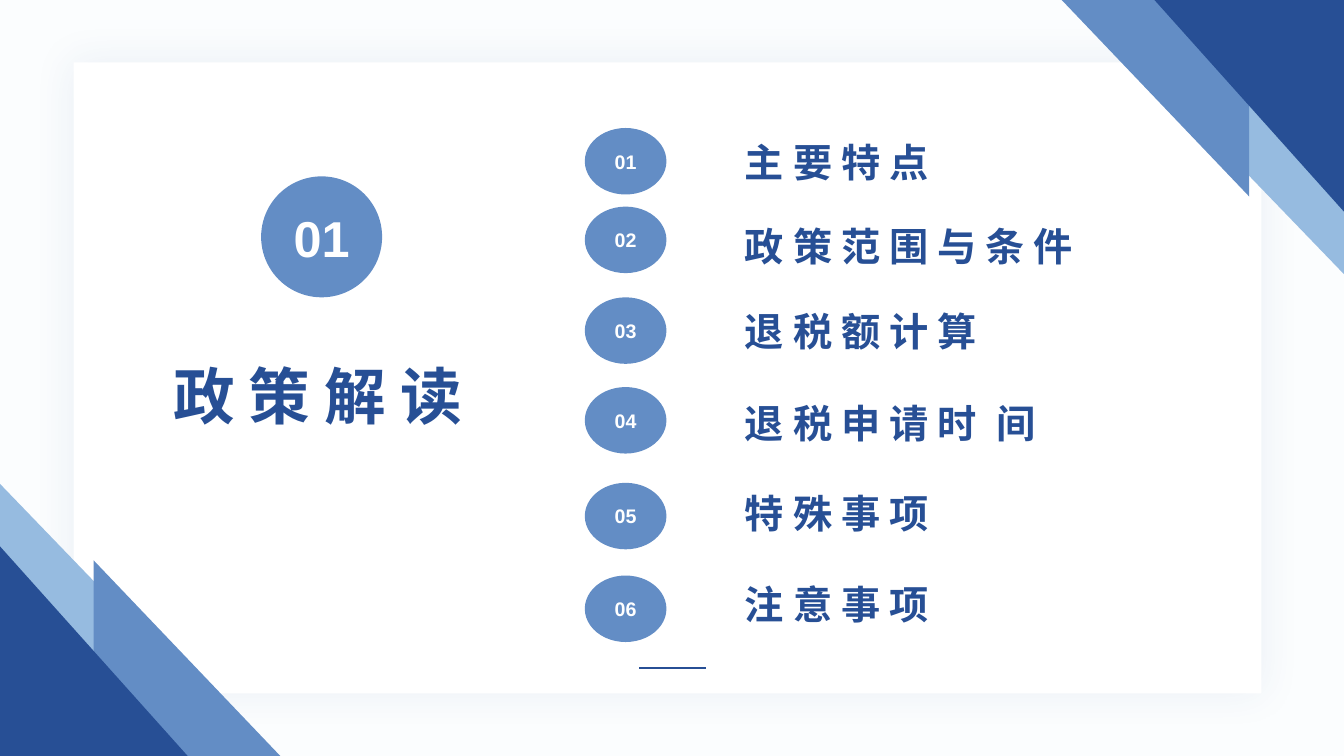
from lxml import etree
from pptx import Presentation
from pptx.dml.color import RGBColor
from pptx.enum.shapes import MSO_CONNECTOR as CONNECTOR, MSO_SHAPE as SHAPE
from pptx.enum.text import MSO_ANCHOR as ANCHOR, MSO_AUTO_SIZE as AUTO_SIZE, PP_ALIGN as ALIGN
from pptx.oxml import parse_xml
from pptx.oxml.ns import nsdecls, qn
from pptx.util import Inches, Pt

NAVY = RGBColor(0x27, 0x4F, 0x95)
BLUE = RGBColor(0x63, 0x8D, 0xC5)
SKY = RGBColor(0x96, 0xBB, 0xE0)
WHITE = RGBColor(0xFF, 0xFF, 0xFF)
BACKGROUND = RGBColor(0xFB, 0xFD, 0xFE)

WIDE_GAP = "|"
AGENDA = [
    ("主 要 特 点", 0, 0.05),
    ("政 策 范 围 与 条 件", 0.78, 0.89),
    ("退 税 额 计 算", 1.68, 1.73),
    ("退 税 申 请 时|间", 2.57, 2.64),
    ("特 殊 事 项", 3.52, 3.54),
    ("注 意 事 项", 4.44, 4.44),
]
TRIANGLES = [
    (0, 0, 1.88, 1.95, SKY),
    (0.94, 0.77, 1.86, 1.95, BLUE),
    (0, 0.62, 1.88, 2.1, NAVY),
]


def add_run(paragraph, text, size, color):
    """Add a bold Arial run to the paragraph and return it."""
    run = paragraph.add_run()
    run.text = text
    formats = {"name": "Arial", "size": Pt(size), "bold": True}
    for name, value in formats.items():
        setattr(run.font, name, value)
    run.font.color.rgb = color
    return run


def add_solid(slide, preset, box, color):
    """Add a flat preset shape filled with one colour."""
    shape = slide.shapes.add_shape(preset, *map(Inches, box))
    shape.shadow.inherit = False
    shape.fill.solid()
    shape.fill.fore_color.rgb = color
    shape.line.fill.background()
    return shape


def add_badge(slide, box, number, size):
    """Add a numbered ellipse."""
    frame = add_solid(slide, SHAPE.OVAL, box, BLUE).text_frame
    frame.vertical_anchor = ANCHOR.MIDDLE
    paragraph = frame.paragraphs[0]
    paragraph.alignment = ALIGN.CENTER
    add_run(paragraph, f"{number:02d}", size, WHITE)


def add_label(slide, box, text, size):
    """Add a navy text box, widening the space where a wide gap is marked."""
    frame = slide.shapes.add_textbox(*map(Inches, box)).text_frame
    formats = {"word_wrap": True, "auto_size": AUTO_SIZE.SHAPE_TO_FIT_TEXT}
    for name, value in formats.items():
        setattr(frame, name, value)
    paragraph = frame.paragraphs[0]
    start, gap, end = text.partition(WIDE_GAP)
    add_run(paragraph, start, size, NAVY)
    if gap:
        space = add_run(paragraph, " ", size, NAVY)
        space.font._element.set("spc", "780")
        add_run(paragraph, end, size, NAVY)


def add_panel(slide, box):
    """Add the white panel with its soft glow."""
    panel = add_solid(slide, SHAPE.RECTANGLE, box, WHITE)
    effects = panel._element.spPr.find(qn("a:effectLst"))
    effects.append(parse_xml(
        f'<a:outerShdw {nsdecls("a")} blurRad="{Pt(29)}" dist="0" dir="0" algn="ctr" rotWithShape="0">'
        f'<a:srgbClr val="{NAVY}"><a:alpha val="8000"/></a:srgbClr></a:outerShdw>'))


def add_corner(slide, box, turned=False):
    """Add three overlapping triangles, turned half round for the upper corner."""
    left, top, width, height = box
    for x, y, side, rise, color in TRIANGLES:
        if turned:
            x, y = width - x - side, height - y - rise
        triangle = add_solid(slide, SHAPE.RIGHT_TRIANGLE, (left + x, top + y, side, rise), color)
        triangle.rotation = 180 if turned else 0


def add_heading(slide, box):
    """Add the section number above the section title."""
    left, top, width, height = box
    add_label(slide, (left, top + 1.75, width, height - 1.75), "政 策 解 读", 44)
    add_badge(slide, (left + 0.97, top, 1.2, 1.2), 1, 36)


def add_agenda(slide, box):
    """Add the numbered topics down the box."""
    left, top, width, height = box
    for number, (topic, badge_top, label_top) in enumerate(AGENDA, 1):
        add_badge(slide, (left, top + badge_top, 0.81, 0.66), number, 14)
        add_label(slide, (left + 1.49, top + label_top, width - 1.49, 0.57), topic, 28)


def add_rule(slide, left, top, width):
    """Add the short line at the foot of the panel."""
    ends = map(Inches, (left, top, left + width, top))
    rule = slide.shapes.add_connector(CONNECTOR.STRAIGHT, *ends)
    rule.line.color.rgb = NAVY
    rule.line.width = Pt(1.5)
    etree.SubElement(rule._element.spPr, qn("a:effectLst"))


def main():
    """Build and save the section slide."""
    presentation = Presentation()
    presentation.slide_width = Inches(13.33)
    presentation.slide_height = Inches(7.5)
    slide = presentation.slides.add_slide(presentation.slide_layouts[6])
    slide.background.fill.solid()
    slide.background.fill.fore_color.rgb = BACKGROUND
    add_panel(slide, (0.73, 0.62, 11.78, 6.26))
    add_corner(slide, (10.53, 0, 2.8, 2.72), turned=True)
    add_corner(slide, (-0.01, 4.79, 2.8, 2.72))
    add_heading(slide, (1.62, 1.75, 3.15, 2.59))
    add_rule(slide, 6.34, 6.63, 0.66)
    add_agenda(slide, (5.8, 1.27, 5.44, 5.1))
    presentation.save("out.pptx")


if __name__ == "__main__":
    main()
